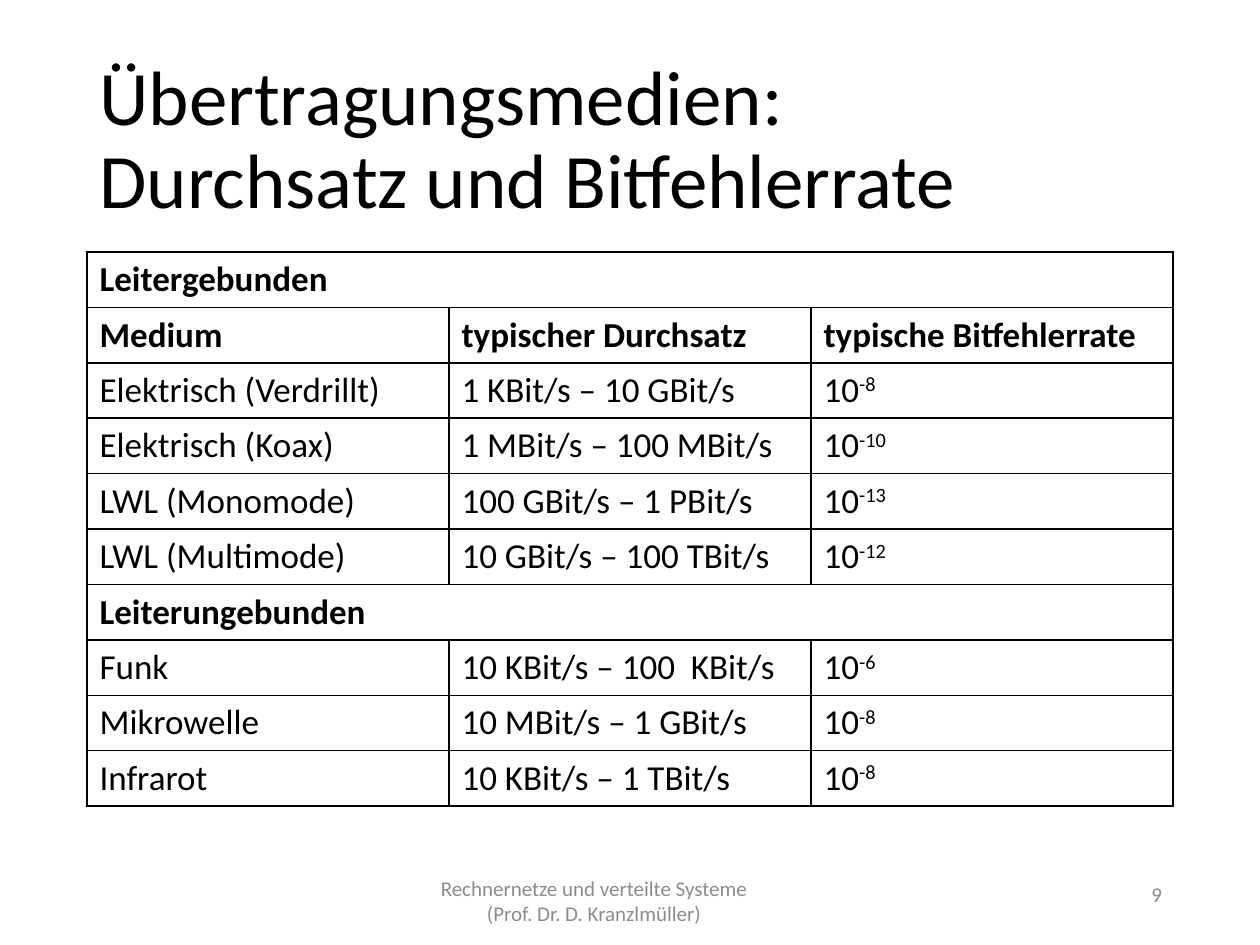
from dataclasses import dataclass

import pptx
import pptx.dml.color
import pptx.enum.text
import pptx.oxml
import pptx.oxml.ns
import pptx.util

Inches = pptx.util.Inches
Pt = pptx.util.Pt
ALIGN = pptx.enum.text.PP_ALIGN
ANCHOR = pptx.enum.text.MSO_ANCHOR

COLORS = {"text": "000000", "footer": "8C8C8C", "border": "000000", "cell": "FFFFFF"}
FONT = "Calibri"


@dataclass
class Section:
    """A row across the whole table."""
    name: str


@dataclass
class Medium:
    name: str
    throughput: str
    exponent: int


HEADINGS = ("Medium", "typischer Durchsatz", "typische Bitfehlerrate")
ROWS = [
    Section("Leitergebunden"),
    HEADINGS,
    Medium("Elektrisch (Verdrillt)", "1 KBit/s – 10 GBit/s", -8),
    Medium("Elektrisch (Koax)", "1 MBit/s – 100 MBit/s", -10),
    Medium("LWL (Monomode)", "100 GBit/s – 1 PBit/s", -13),
    Medium("LWL (Multimode)", "10 GBit/s – 100 TBit/s", -12),
    Section("Leiterungebunden"),
    Medium("Funk", "10 KBit/s – 100  KBit/s", -6),
    Medium("Mikrowelle", "10 MBit/s – 1 GBit/s", -8),
    Medium("Infrarot", "10 KBit/s – 1 TBit/s", -8),
]


def rgb(name: str) -> pptx.dml.color.RGBColor:
    return pptx.dml.color.RGBColor.from_string(COLORS[name])


def add_run(p, text: str, *, size: float = 20, color: str = "text",
            bold: bool = False, superscript: bool = False) -> None:
    r = p.add_run()
    r.text = text
    r.font.name = FONT
    r.font.size = Pt(size)
    r.font.bold = bold
    r.font.color.rgb = rgb(color)
    if superscript:
        r.font._element.set("baseline", "30000")


def add_text_box(slide, left: float, top: float, width: float, height: float,
                 anchor=ANCHOR.TOP):
    tf = slide.shapes.add_textbox(
        Inches(left), Inches(top), Inches(width), Inches(height)).text_frame
    tf.word_wrap = True
    tf.vertical_anchor = anchor
    return tf


def style_cell(cell) -> None:
    cell.fill.solid()
    cell.fill.fore_color.rgb = rgb("cell")
    tc_pr = cell._tc.get_or_add_tcPr()
    for i, side in enumerate("LRTB"):
        tc_pr.insert(i, pptx.oxml.parse_xml(
            f'<a:ln{side} {pptx.oxml.ns.nsdecls("a")} w="12700"><a:solidFill>'
            f'<a:srgbClr val="{COLORS["border"]}"/></a:solidFill></a:ln{side}>'))


def add_title(slide) -> None:
    p = add_text_box(slide, 0.69, 0.4, 8.62, 1.45, ANCHOR.MIDDLE).paragraphs[0]
    p.line_spacing = 0.9
    add_run(p, "Übertragungsmedien:", size=44)
    p.add_line_break()
    add_run(p, "Durchsatz und Bitfehlerrate", size=44)


def add_media_table(slide) -> None:
    table = slide.shapes.add_table(
        len(ROWS), len(HEADINGS), Inches(0.69), Inches(2),
        Inches(8.62), Inches(0.44 * len(ROWS))).table
    table.first_row = table.horz_banding = False
    for i, row in enumerate(ROWS):
        cells = list(table.rows[i].cells)
        for cell in cells:
            style_cell(cell)
        paragraphs = [cell.text_frame.paragraphs[0] for cell in cells]
        if isinstance(row, Section):
            cells[0].merge(cells[-1])
            add_run(paragraphs[0], row.name, bold=True)
        elif isinstance(row, Medium):
            for p, text in zip(paragraphs, (row.name, row.throughput, "10")):
                add_run(p, text)
            add_run(paragraphs[-1], str(row.exponent), superscript=True)
        else:
            for p, text in zip(paragraphs, row):
                add_run(p, text, bold=True)


def add_footer(slide) -> None:
    tf = add_text_box(slide, 3.31, 6.95, 3.38, 0.4, ANCHOR.MIDDLE)
    course = tf.paragraphs[0]
    course._p.get_or_add_pPr().set("marR", str(Inches(0.57)))
    lecturer = tf.add_paragraph()
    number = add_text_box(slide, 8.34, 6.95, 0.98, 0.3).paragraphs[0]
    for p, text, align in (
        (course, "Rechnernetze und verteilte Systeme", ALIGN.CENTER),
        (lecturer, "(Prof. Dr. D. Kranzlmüller)", ALIGN.CENTER),
        (number, "9", ALIGN.RIGHT),
    ):
        p.alignment = align
        add_run(p, text, size=12, color="footer")


def main() -> None:
    prs = pptx.Presentation()
    prs.slide_width, prs.slide_height = Inches(10), Inches(7.5)
    slide = prs.slides.add_slide(prs.slide_layouts[6])
    add_title(slide)
    add_media_table(slide)
    add_footer(slide)
    prs.save("out.pptx")


if __name__ == "__main__":
    main()
